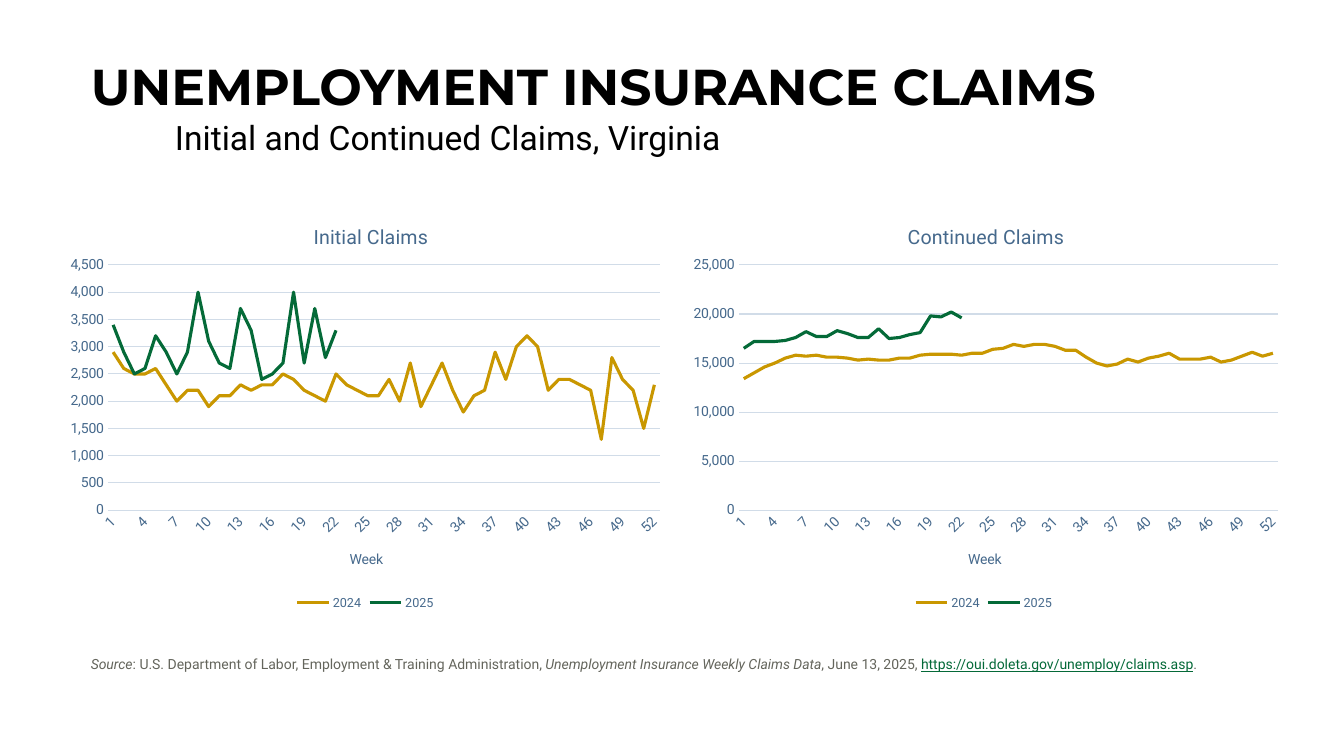
from lxml import etree
from pptx import Presentation
from pptx.chart.data import CategoryChartData
from pptx.dml.color import RGBColor
from pptx.enum.chart import XL_CHART_TYPE, XL_LEGEND_POSITION, XL_MARKER_STYLE, XL_TICK_MARK
from pptx.enum.text import MSO_ANCHOR, PP_ALIGN
from pptx.oxml.ns import qn
from pptx.util import Pt

PX = 9525  # EMU per px, 96 px to the inch
LINE_CHART = XL_CHART_TYPE.LINE
LEGEND_BOTTOM = XL_LEGEND_POSITION.BOTTOM
NO_MARKER = XL_MARKER_STYLE.NONE
NO_TICK = XL_TICK_MARK.NONE
ANCHOR_BOTTOM = MSO_ANCHOR.BOTTOM
ALIGN_LEFT = PP_ALIGN.LEFT

BLACK = RGBColor(0x00, 0x00, 0x00)
GRAY = RGBColor(0x64, 0x65, 0x5C)
LINK_GREEN = RGBColor(0x04, 0x69, 0x38)
SLATE = RGBColor(0x46, 0x69, 0x8C)
PALE_BLUE = RGBColor(0xD1, 0xDC, 0xE8)
GOLD = RGBColor(0xC9, 0x97, 0x00)
GREEN = RGBColor(0x04, 0x6A, 0x38)
SERIES_COLORS = {"2024": GOLD, "2025": GREEN}

HEADING_FONT = "Montserrat"
BODY_FONT = "Roboto"
WEEKS = 52

# Weekly claims, in hundreds
INITIAL_CLAIMS = {
    "2024": [29, 26, 25, 25, 26, 23, 20, 22, 22, 19, 21, 21, 23, 22, 23, 23, 25, 24,
             22, 21, 20, 25, 23, 22, 21, 21, 24, 20, 27, 19, 23, 27, 22, 18, 21, 22,
             29, 24, 30, 32, 30, 22, 24, 24, 23, 22, 13, 28, 24, 22, 15, 23],
    "2025": [34, 29, 25, 26, 32, 29, 25, 29, 40, 31, 27, 26, 37, 33, 24, 25, 27, 40,
             27, 37, 28, 33],
}
CONTINUED_CLAIMS = {
    "2024": [134, 140, 146, 150, 155, 158, 157, 158, 156, 156, 155, 153, 154, 153,
             153, 155, 155, 158, 159, 159, 159, 158, 160, 160, 164, 165, 169, 167,
             169, 169, 167, 163, 163, 156, 150, 147, 149, 154, 151, 155, 157, 160,
             154, 154, 154, 156, 151, 153, 157, 161, 157, 160],
    "2025": [165, 172, 172, 172, 173, 176, 182, 177, 177, 183, 180, 176, 176, 185,
             175, 176, 179, 181, 198, 197, 202, 196],
}


def to_emu(box):
    return [length * PX for length in box]


def style_font(font, size, color, name=BODY_FONT, bold=False):
    font.name = name
    font.size = Pt(size)
    font.bold = bold
    font.color.rgb = color


def place_heading(placeholder, box, text, size, name, bold):
    placeholder.left, placeholder.top, placeholder.width, placeholder.height = to_emu(box)
    frame = placeholder.text_frame
    frame.text = text
    frame.word_wrap = True
    frame.vertical_anchor = ANCHOR_BOTTOM
    paragraph = frame.paragraphs[0]
    paragraph.alignment = ALIGN_LEFT
    paragraph.space_before = Pt(0)
    style_font(paragraph.runs[0].font, size, BLACK, name, bold)
    return paragraph


def add_source(slide, box):
    frame = slide.shapes.add_textbox(*to_emu(box)).text_frame
    frame.word_wrap = True
    paragraph = frame.paragraphs[0]
    pieces = [
        ("Source", True, False),
        (": U.S. Department of Labor, Employment & Training Administration, ", False, False),
        ("Unemployment Insurance Weekly Claims Data", True, False),
        (", June 13, 2025, ", False, False),
        ("https://oui.doleta.gov/unemploy/claims.asp", False, True),
        (".", False, False),
    ]
    for text, italic, is_address in pieces:
        run = paragraph.add_run()
        run.text = text
        style_font(run.font, 10, LINK_GREEN if is_address else GRAY)
        run.font.italic = italic
        run.font.underline = is_address


def set_layout(element, position, inner=False, **fractions):
    """Fix a chart part at fractions of the chart's width and height."""
    for old_layout in element.findall(qn("c:layout")):
        element.remove(old_layout)
    layout = etree.Element(qn("c:layout"))
    manual = etree.SubElement(layout, qn("c:manualLayout"))
    if inner:
        etree.SubElement(manual, qn("c:layoutTarget")).set("val", "inner")
    for mode in ("xMode", "yMode"):
        etree.SubElement(manual, qn(f"c:{mode}")).set("val", "edge")
    for key, value in fractions.items():
        etree.SubElement(manual, qn(f"c:{key}")).set("val", str(value))
    element.insert(position, layout)


def set_title(title, text, size, x, y):
    title.text_frame.text = text
    style_font(title.text_frame.paragraphs[0].runs[0].font, size, SLATE)
    set_layout(title.element, 1, x=x, y=y)


def add_claims_chart(slide, box, title, title_x, claims, maximum, step, plot_x, plot_width):
    data = CategoryChartData(number_format="#,##0")
    data.categories = [str(week) for week in range(1, WEEKS + 1)]
    for year, hundreds in claims.items():
        values = [value * 100 for value in hundreds]
        data.add_series(year, values + [None] * (WEEKS - len(values)))
    chart = slide.shapes.add_chart(LINE_CHART, *to_emu(box), data).chart
    style_font(chart.font, 10, SLATE)
    chart.has_title = True
    set_title(chart.chart_title, title, 14, title_x, 0.05)
    plot_area = chart.element.find(".//" + qn("c:plotArea"))
    set_layout(plot_area, 0, inner=True, x=plot_x, y=0.16, w=plot_width, h=0.59)

    # Legend and lines
    chart.has_legend = True
    chart.legend.position = LEGEND_BOTTOM
    chart.legend.include_in_layout = False
    style_font(chart.legend.font, 9, SLATE)
    for series in chart.plots[0].series:
        series.smooth = False
        series.marker.style = NO_MARKER
        series.format.line.color.rgb = SERIES_COLORS[series.name]
        series.format.line.width = Pt(2.25)

    # Week axis, every third label, slanted
    week_axis = chart.category_axis
    week_axis.has_title = True
    set_title(week_axis.axis_title, "Week", 10, 0.47, 0.84)
    week_axis.format.line.color.rgb = PALE_BLUE
    week_axis.format.line.width = Pt(0.75)
    style_font(week_axis.tick_labels.font, 10, SLATE)
    axis_element = plot_area.find(qn("c:catAx"))
    axis_element.find(f"{qn('c:txPr')}/{qn('a:bodyPr')}").set("rot", "-2700000")
    label_skip = etree.Element(qn("c:tickLblSkip"))
    label_skip.set("val", "3")
    axis_element.find(qn("c:noMultiLvlLbl")).addprevious(label_skip)

    # Claims axis
    claims_axis = chart.value_axis
    claims_axis.minimum_scale = 0
    claims_axis.maximum_scale = maximum
    claims_axis.major_unit = step
    claims_axis.format.line.fill.background()
    claims_axis.major_gridlines.format.line.color.rgb = PALE_BLUE
    claims_axis.major_gridlines.format.line.width = Pt(0.75)
    claims_axis.tick_labels.number_format = "#,##0"
    claims_axis.tick_labels.number_format_is_linked = False
    style_font(claims_axis.tick_labels.font, 10, SLATE)
    for axis in (week_axis, claims_axis):
        axis.major_tick_mark = NO_TICK
        axis.minor_tick_mark = NO_TICK


def main():
    presentation = Presentation()
    presentation.slide_width = 1280 * PX
    presentation.slide_height = 720 * PX
    slide = presentation.slides.add_slide(presentation.slide_layouts[2])

    # Headings
    title, subtitle = slide.placeholders
    place_heading(title, (77, 48, 1065, 67), "UNEMPLOYMENT INSURANCE CLAIMS",
                  36, HEADING_FONT, True)
    paragraph = place_heading(subtitle, (157, 107, 1018, 48),
                              "Initial and Continued Claims, Virginia", 24, BODY_FONT, False)
    paragraph.space_after = Pt(6)

    # Charts and source line
    add_claims_chart(slide, (56, 189, 584, 396), "Initial Claims", 0.41,
                     INITIAL_CLAIMS, 4500, 500, 0.08, 0.9)
    add_claims_chart(slide, (645, 189, 584, 396), "Continued Claims", 0.37,
                     CONTINUED_CLAIMS, 25000, 5000, 0.1, 0.88)
    add_source(slide, (77, 620, 1075, 26))
    presentation.save("out.pptx")


if __name__ == "__main__":
    main()
